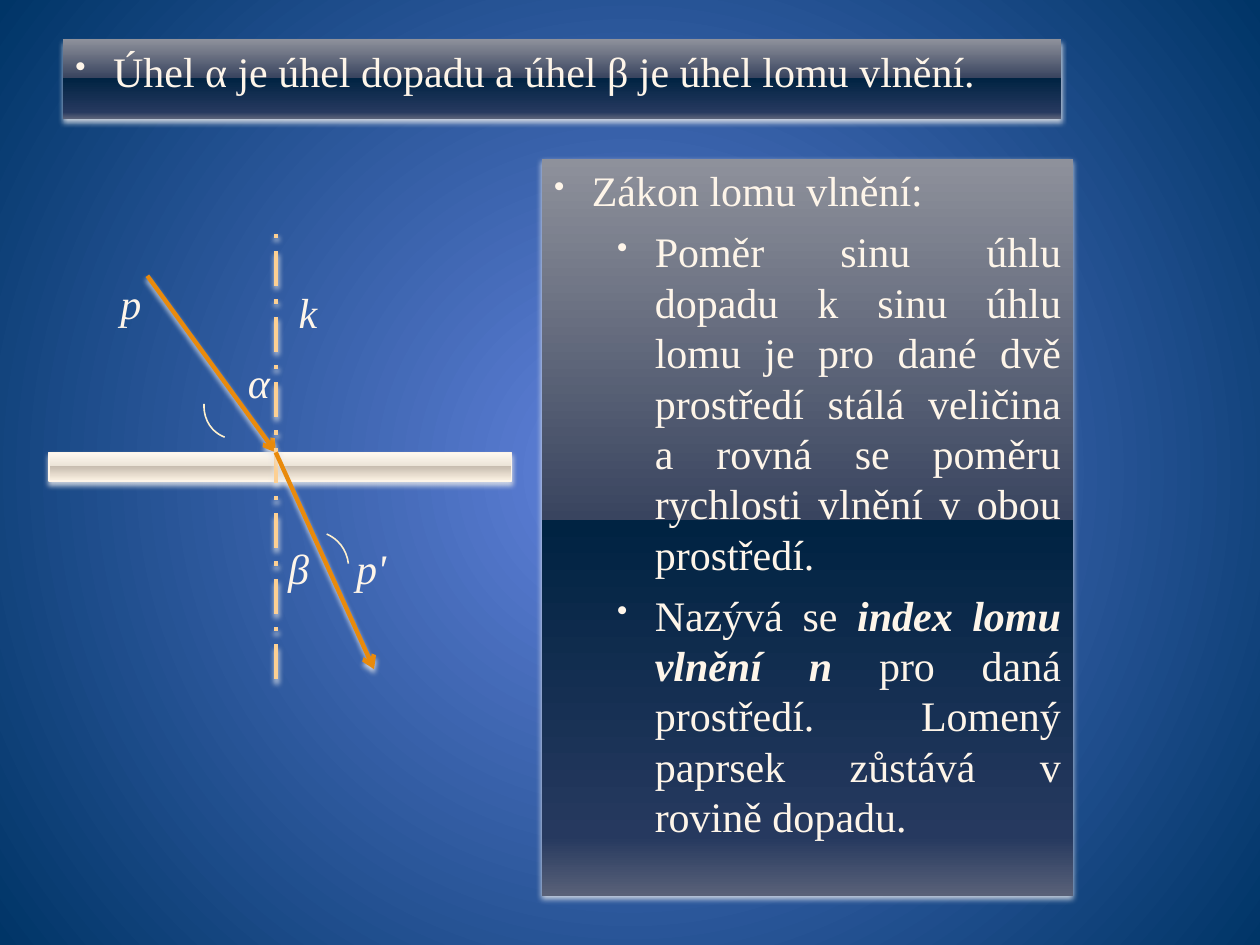
from lxml.etree import SubElement
from pptx import Presentation
from pptx.dml.color import RGBColor
from pptx.enum.dml import MSO_LINE
from pptx.enum.shapes import MSO_CONNECTOR, MSO_SHAPE
from pptx.enum.text import MSO_ANCHOR, PP_ALIGN
from pptx.oxml.ns import qn
from pptx.util import Cm, Pt

C = {"text": "FEF5E9", "ray": "E98A0B", "normal": "FDD093",
     "arc": "FEF0CD", "glow": "E6E8EC"}
FONT = "Times New Roman"
BACK = [(0, "6383DD"), (100, "003567")]
NAVY = [(0, "8E919B"), (49, "39445F"), (49, "002342"), (92, "26395F"), (100, "596178")]
CREAM = [(0, "FEF8EF"), (49, "ECE4D8"), (49, "C8BDB0"), (92, "F5EBDC"), (100, "FDF3E6")]

# Content: all positions in cm; paragraphs are (level, runs), runs are (text, emphasis)
PANELS = [
    ((1.27, 0.79, 20.12, 1.6),
     [(0, [("Úhel α je úhel dopadu a úhel β je úhel lomu vlnění.", False)])]),
    ((10.92, 3.2, 10.72, 14.86),
     [(0, [("Zákon lomu vlnění:", False)]),
      (1, [("Poměr sinu úhlu dopadu k sinu úhlu lomu je pro dané dvě prostředí "
            "stálá veličina a rovná se poměru rychlosti vlnění v obou prostředí.", False)]),
      (1, [("Nazývá se ", False), ("index lomu vlnění n", True),
           (" pro daná prostředí. Lomený paprsek zůstává v rovině dopadu.", False)])]),
]
INTERFACE = (0.99, 9.12, 9.32, 0.58)
HIT = (5.56, 9.12)
LINES = [  # start, end, colour, is a ray
    ((2.97, 5.56), HIT, "ray", True),
    ((HIT[0], 13.69), (HIT[0], 4.57), "normal", False),
    (HIT, (7.54, 13.49), "ray", True),
]
ARCS = [((4.04, 7.26, 1.85, 1.52), 316.7), ((5.38, 10.74, 1.68, 1.55), 134)]
ARC_ANGLES = (162, 215.22)
LABELS = [("α", 4.75, 7.06), ("β", 5.56, 10.82), ("p", 2.18, 5.46),
          ("p'", 6.93, 10.82), ("k", 5.77, 5.66)]
LABEL_SIZE = (1.98, 1.27)
HANG, LEVEL_INDENT = 0.76, (0.76, 2.03)


def rgb(name):
    return RGBColor.from_string(C[name])


def cm(values):
    return [Cm(v) for v in values]


def add(parent, tag, **attrs):
    return SubElement(parent, qn(tag), {k: str(v) for k, v in attrs.items()})


def set_gradient(fill, parent, stops, radial=False):
    fill.gradient()
    grad = parent.find(qn("a:gradFill"))
    for child in list(grad):
        grad.remove(child)
    gs_list = add(grad, "a:gsLst")
    for pos, color in stops:
        add(add(gs_list, "a:gs", pos=pos * 1000), "a:srgbClr", val=color)
    if radial:
        path = add(grad, "a:path", path="circle")
        add(path, "a:fillToRect", l=50000, t=50000, r=50000, b=50000)
    else:
        add(grad, "a:lin", ang=5400000, scaled=0)


def add_glow(sp_pr):
    effects = sp_pr.find(qn("a:effectLst"))
    if effects is None:
        effects = add(sp_pr, "a:effectLst")
    shadow = add(effects, "a:outerShdw", blurRad=Pt(3.1), dist=Pt(2),
                 dir=5400000, rotWithShape=0)
    add(add(shadow, "a:srgbClr", val=C["glow"]), "a:alpha", val=83000)


def set_font(p, italic=None):
    f = p.font
    f.name, f.size, f.italic = FONT, Pt(24), italic
    f.color.rgb = rgb("text")


def add_bar(shapes, box, stops):
    s = shapes.add_shape(MSO_SHAPE.RECTANGLE, *cm(box))
    set_gradient(s.fill, s.element.spPr, stops)
    s.line.fill.background()
    s.shadow.inherit = False
    add_glow(s.element.spPr)
    return s


def add_bullets(tf, paragraphs):
    tf.word_wrap = True
    tf.vertical_anchor = MSO_ANCHOR.TOP
    for i, (level, runs) in enumerate(paragraphs):
        p = tf.add_paragraph() if i else tf.paragraphs[0]
        p.level = level
        p.alignment = PP_ALIGN.JUSTIFY if level else PP_ALIGN.LEFT
        if i:
            p.space_before = Pt(6)
        pr = p._p.get_or_add_pPr()
        pr.set("marL", str(Cm(LEVEL_INDENT[level])))
        pr.set("indent", str(-Cm(HANG)))
        add(add(pr, "a:buClr"), "a:srgbClr", val=C["text"])
        add(pr, "a:buSzPct", val=73000)
        add(pr, "a:buChar", char="•")
        set_font(p)
        for text, emphasis in runs:
            r = p.add_run()
            r.text = text
            if emphasis:
                r.font.bold = r.font.italic = True


def add_panel(shapes, box, paragraphs):
    add_bullets(add_bar(shapes, box, NAVY).text_frame, paragraphs)


prs = Presentation()
prs.slide_width, prs.slide_height = Cm(25.4), Cm(19.05)
slide = prs.slides.add_slide(prs.slide_layouts[6])
shapes = slide.shapes

# Background
fill = slide.background.fill
fill.solid()
set_gradient(fill, slide.element.cSld.find(qn("p:bg")).find(qn("p:bgPr")), BACK, radial=True)

# Heading panel
add_panel(shapes, *PANELS[0])

# Interface between the two media
bar = add_bar(shapes, INTERFACE, CREAM)
bar.line.color.rgb = rgb("text")
bar.line.width = Pt(0.9)

# Rays and normal
for start, end, color, is_ray in LINES:
    s = shapes.add_connector(MSO_CONNECTOR.STRAIGHT, *cm(start + end))
    s.line.color.rgb = rgb(color)
    s.line.width = Pt(2.5)
    sp_pr = s.element.spPr
    if is_ray:
        add(sp_pr.find(qn("a:ln")), "a:tailEnd", type="arrow")
    else:
        s.line.dash_style = MSO_LINE.LONG_DASH_DOT
    add_glow(sp_pr)

# Angle arcs
for box, rotation in ARCS:
    s = shapes.add_shape(MSO_SHAPE.ARC, *cm(box))
    s.rotation = rotation
    for i, angle in enumerate(ARC_ANGLES):
        s.adjustments[i] = angle * 0.6
    s.fill.background()
    s.line.color.rgb = rgb("arc")
    s.line.width = Pt(0.9)
    s.shadow.inherit = False

# Labels
for text, x, y in LABELS:
    tf = shapes.add_textbox(*cm((x, y) + LABEL_SIZE)).text_frame
    tf.word_wrap = True
    p = tf.paragraphs[0]
    p.text = text
    set_font(p, italic=True)

# Law of refraction panel
add_panel(shapes, *PANELS[1])

prs.save("out.pptx")
